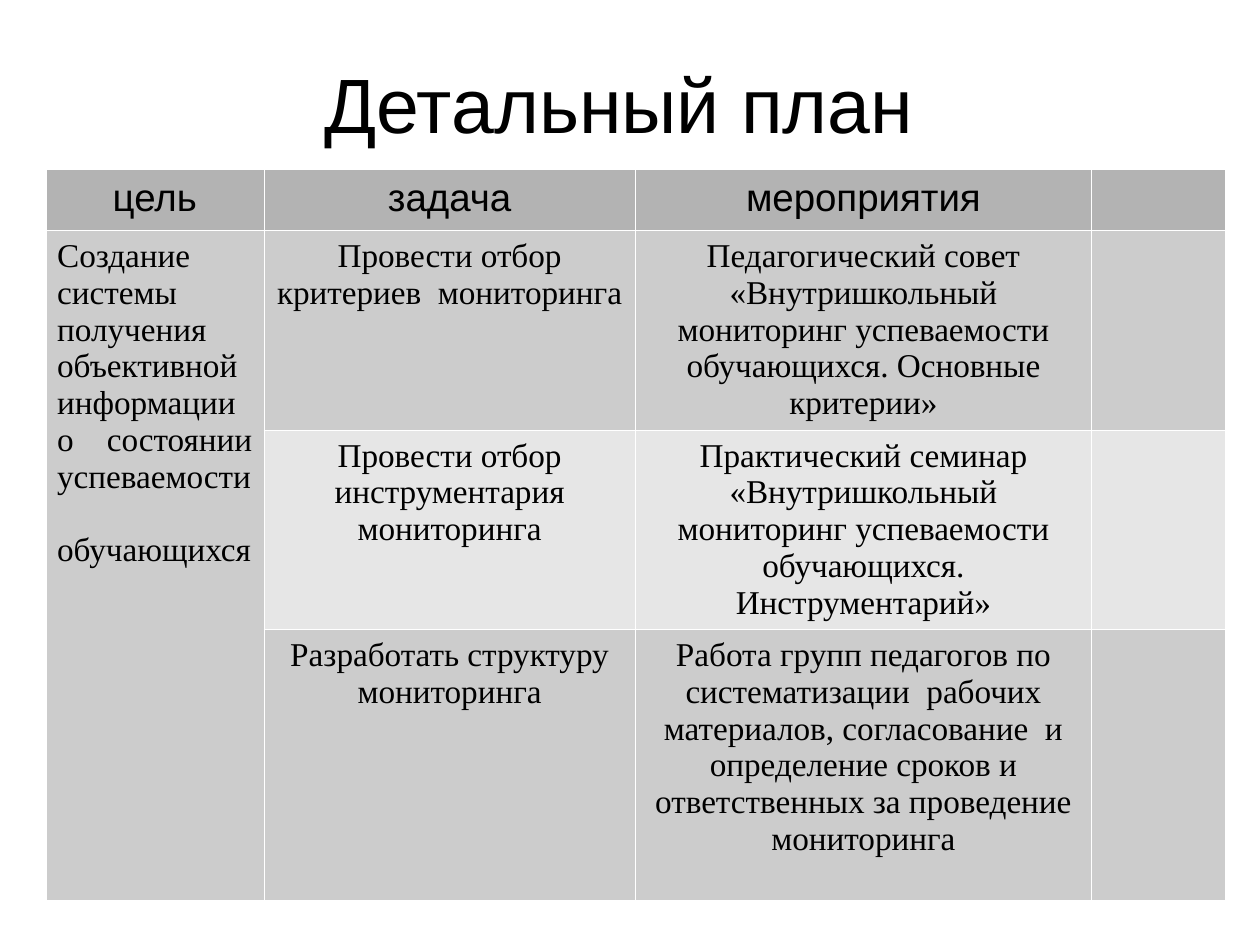
from pptx import Presentation
from pptx.dml.color import RGBColor
from pptx.enum.text import MSO_ANCHOR, PP_ALIGN
from pptx.oxml import parse_xml
from pptx.oxml.ns import nsdecls
from pptx.util import Pt

# Content
TITLE = "Детальный план "
HEADER = ("цель", "задача", "мероприятия", "")
GOAL = "Создание системы получения объективной информации о состоянии успеваемости  обучающихся"
TASKS = [
    ("Провести отбор критериев  мониторинга",
     "Педагогический совет «Внутришкольный мониторинг успеваемости обучающихся. Основные критерии»"),
    ("Провести отбор инструментария мониторинга",
     "Практический семинар «Внутришкольный мониторинг успеваемости обучающихся. Инструментарий»"),
    ("Разработать структуру мониторинга",
     "Работа групп педагогов по систематизации  рабочих материалов, согласование  "
     "и определение сроков и ответственных за проведение мониторинга"),
]
COLUMN_WIDTHS = (124.5, 212.5, 260.5, 76.5)
ROW_HEIGHTS = (35, 114, 114, 154.5)
TABLE_LEFT, TABLE_TOP = 26.2, 96.4


class Theme:
    heading_font, body_font = "Arial", "Times New Roman"
    title_size, header_size, body_size = 44, 22, 19
    text = RGBColor(0x00, 0x00, 0x00)
    header_fill = RGBColor(0xB3, 0xB3, 0xB3)
    band_fills = (RGBColor(0xCC, 0xCC, 0xCC), RGBColor(0xE6, 0xE6, 0xE6))
    border, border_width = "FFFFFF", 0.06


def format_paragraph(paragraph, font_name, size, alignment=PP_ALIGN.CENTER):
    paragraph.alignment = alignment
    paragraph.font.size = Pt(size)
    for run in paragraph.runs:
        run.font.name = font_name
        run.font.size = Pt(size)
        run.font.color.rgb = Theme.text


def add_borders(cell):
    properties = cell._tc.get_or_add_tcPr()
    for index, side in enumerate(("lnL", "lnR", "lnT", "lnB")):
        line = parse_xml(
            f'<a:{side} {nsdecls("a")} w="{Pt(Theme.border_width)}"><a:solidFill>'
            f'<a:srgbClr val="{Theme.border}"/></a:solidFill></a:{side}>')
        properties.insert(index, line)


def format_cell(cell, text, fill, font_name, size, alignment):
    cell.margin_left = cell.margin_right = Pt(6.5)
    cell.margin_top = cell.margin_bottom = Pt(4.3)
    cell.fill.solid()
    cell.fill.fore_color.rgb = fill
    add_borders(cell)
    cell.text_frame.text = text
    format_paragraph(cell.text_frame.paragraphs[0], font_name, size, alignment)


def add_title(slide):
    title = slide.shapes.title
    title.left, title.top, title.width, title.height = Pt(36), Pt(21.6), Pt(648), Pt(74)
    frame = title.text_frame
    frame.margin_left = frame.margin_right = frame.margin_top = frame.margin_bottom = 0
    frame.vertical_anchor = MSO_ANCHOR.MIDDLE
    frame.text = TITLE
    format_paragraph(frame.paragraphs[0], Theme.heading_font, Theme.title_size)


def add_plan(slide):
    rows = [HEADER] + [(GOAL if index == 0 else "", *task, "")
                       for index, task in enumerate(TASKS)]
    table = slide.shapes.add_table(
        len(rows), len(HEADER), Pt(TABLE_LEFT), Pt(TABLE_TOP),
        Pt(sum(COLUMN_WIDTHS)), Pt(sum(ROW_HEIGHTS))).table
    for column, width in zip(table.columns, COLUMN_WIDTHS):
        column.width = Pt(width)
    for row, height in zip(table.rows, ROW_HEIGHTS):
        row.height = Pt(height)

    for row_index, texts in enumerate(rows):
        is_header = row_index == 0
        fill = Theme.header_fill if is_header else Theme.band_fills[(row_index - 1) % 2]
        font_name = Theme.heading_font if is_header else Theme.body_font
        size = Theme.header_size if is_header else Theme.body_size
        for column_index, text in enumerate(texts):
            is_goal = column_index == 0 and not is_header
            alignment = PP_ALIGN.JUSTIFY if is_goal else PP_ALIGN.CENTER
            format_cell(table.cell(row_index, column_index), text, fill,
                        font_name, size, alignment)

    # One goal covers all the tasks
    table.cell(1, 0).merge(table.cell(len(TASKS), 0))


def main():
    presentation = Presentation()
    presentation.slide_width, presentation.slide_height = Pt(720), Pt(540)
    slide = presentation.slides.add_slide(presentation.slide_layouts[5])
    add_title(slide)
    add_plan(slide)
    presentation.save("out.pptx")


if __name__ == "__main__":
    main()
